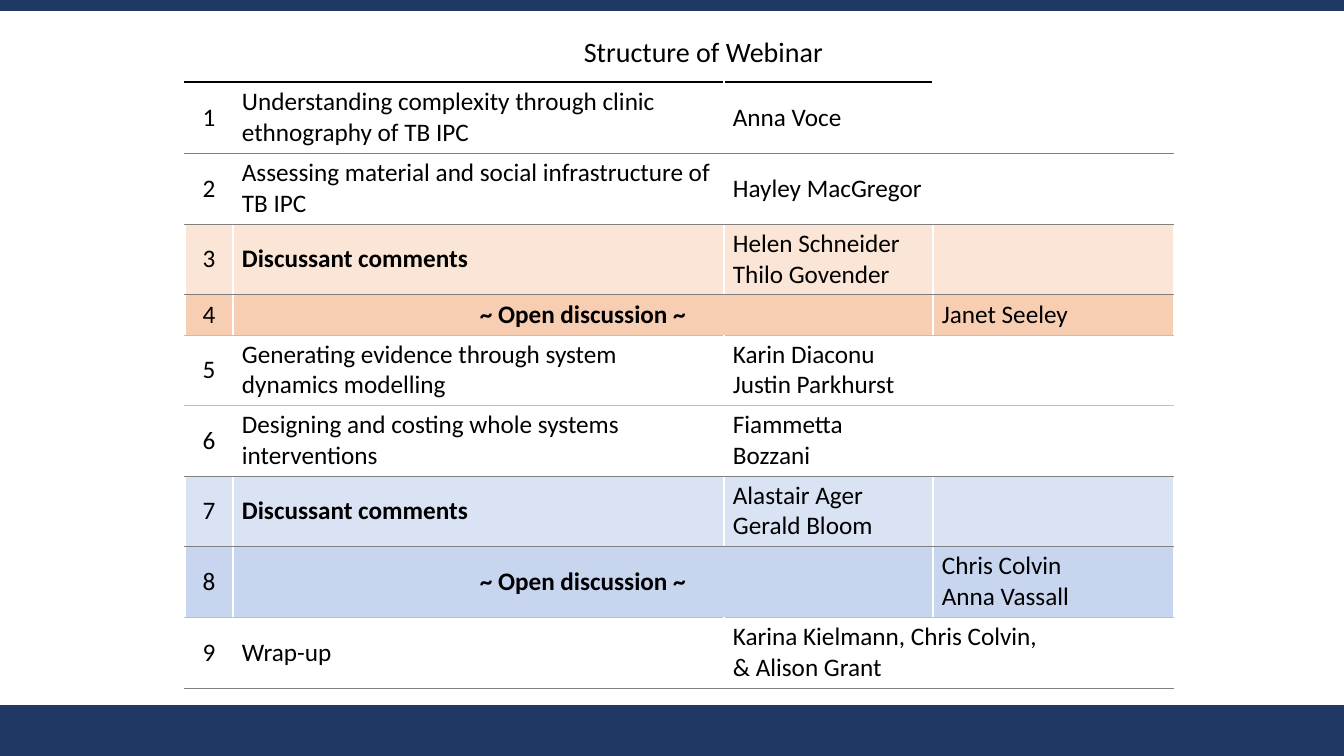
from lxml import etree
from pptx import Presentation
from pptx import util as u
from pptx.dml.color import RGBColor
from pptx.enum import shapes, text
from pptx.oxml.ns import qn

W, H = 1344, 756
FONT = "Calibri"
COLORS = {
    "navy": "203864", "white": "FFFFFF", "black": "000000",
    "gray": "808080", "light": "BFBFBF",
    "peach": "FBE5D6", "orange": "F8CEB2", "ice": "DAE3F3", "blue": "C8D5EE",
}
LINE_PT = {"white": 1, "black": 1, "gray": 0.25, "light": 0.25}
COL_WIDTHS = [48, 491, 209, 241]
OPEN = "~ Open discussion ~"
COMMENTS = "Discussant comments"

# topic, speakers, chair, row height, fill, rule below
AGENDA = [
    ("Understanding complexity through clinic ethnography of TB IPC",
     "Anna Voce", "", 71, None, "gray"),
    ("Assessing material and social infrastructure of TB IPC",
     "Hayley MacGregor", "", 71, None, "gray"),
    (COMMENTS, "Helen Schneider\nThilo Govender", "", 70, "peach", "gray"),
    (OPEN, "", "Janet Seeley", 41, "orange", "light"),
    ("Generating evidence through system dynamics modelling",
     "Karin Diaconu\nJustin Parkhurst", "", 70, None, "light"),
    ("Designing and costing whole systems interventions",
     "Fiammetta Bozzani", "", 71, None, "gray"),
    (COMMENTS, "Alastair Ager\nGerald Bloom", "", 70, "ice", "gray"),
    (OPEN, "", "Chris Colvin\nAnna Vassall", 71, "blue", "light"),
    ("Wrap-up", "Karina Kielmann, Chris Colvin,\v& Alison Grant", "",
     71, "white", "gray"),
]


def px(n):
    return u.Emu(n * 9071)


def rgb(name):
    return RGBColor.from_string(COLORS[name])


def add_bar(s, x, y, w, h):
    sp = s.shapes.add_shape(shapes.MSO_SHAPE.RECTANGLE,
                            px(x), px(y), px(w), px(h))
    sp.shadow.inherit = False
    sp.fill.solid()
    sp.fill.fore_color.rgb = rgb("navy")
    sp.line.fill.background()


def set_borders(cell, top, bottom):
    tcPr = cell._tc.get_or_add_tcPr()
    sides = (("L", "white"), ("R", "white"), ("T", top), ("B", bottom))
    for side, color in sides:
        ln = etree.SubElement(tcPr, qn(f"a:ln{side}"),
                              w=str(u.Pt(LINE_PT[color])))
        fill = etree.SubElement(ln, qn("a:solidFill"))
        etree.SubElement(fill, qn("a:srgbClr"), val=COLORS[color])


def style_cell(cell, top, bottom, fill=None):
    set_borders(cell, top, bottom)
    if fill:
        cell.fill.solid()
        cell.fill.fore_color.rgb = rgb(fill)
    else:
        cell.fill.background()
    cell.margin_left = cell.margin_right = px(9)
    cell.margin_top = cell.margin_bottom = px(4)
    cell.vertical_anchor = text.MSO_ANCHOR.MIDDLE


def write(cell, words, size=18, bold=False, center=False):
    tf = cell.text_frame
    tf.text = words
    for p in tf.paragraphs:
        p.alignment = text.PP_ALIGN.CENTER if center else text.PP_ALIGN.LEFT
        for r in p.runs:
            r.font.name = FONT
            r.font.size = u.Pt(size)
            r.font.bold = bold
            r.font.color.rgb = rgb("black")


def add_agenda(s, x, y, header_h):
    heights = [header_h] + [row[3] for row in AGENDA]
    tbl = s.shapes.add_table(len(heights), len(COL_WIDTHS), px(x), px(y),
                             px(sum(COL_WIDTHS)), px(sum(heights))).table
    tbl.first_row = tbl.horz_banding = False
    for col, w in zip(tbl.columns, COL_WIDTHS):
        col.width = px(w)
    for row, h in zip(tbl.rows, heights):
        row.height = px(h)

    # Header: the black rule stops before the last column
    header_rules = ["black"] * 3 + ["white"]
    for c, rule in enumerate(header_rules):
        style_cell(tbl.cell(0, c), "white", rule)
    tbl.cell(0, 1).merge(tbl.cell(0, 3))
    write(tbl.cell(0, 1), "Structure of Webinar", size=20, center=True)

    # Agenda rows
    tops = header_rules
    for i, (topic, speakers, chair, _, fill, rule) in enumerate(AGENDA, 1):
        for c, top in enumerate(tops):
            style_cell(tbl.cell(i, c), top, rule, fill)
        tops = [rule] * 4
        if topic == OPEN:
            tbl.cell(i, 1).merge(tbl.cell(i, 2))
        elif topic == "Wrap-up":
            tbl.cell(i, 2).merge(tbl.cell(i, 3))
        write(tbl.cell(i, 0), str(i), center=True)
        write(tbl.cell(i, 1), topic, bold=topic in (OPEN, COMMENTS),
              center=topic == OPEN)
        for c, names in ((2, speakers), (3, chair)):
            if names:
                write(tbl.cell(i, c), names)


def main():
    prs = Presentation()
    prs.slide_width, prs.slide_height = px(W), px(H)
    s = prs.slides.add_slide(prs.slide_layouts[6])
    # Bottom and top bands
    add_bar(s, 0, 705, W, 51)
    add_bar(s, 0, 0, W, 11)
    # Programme table
    add_agenda(s, 185, 23, 59)
    prs.save("out.pptx")


if __name__ == "__main__":
    main()
